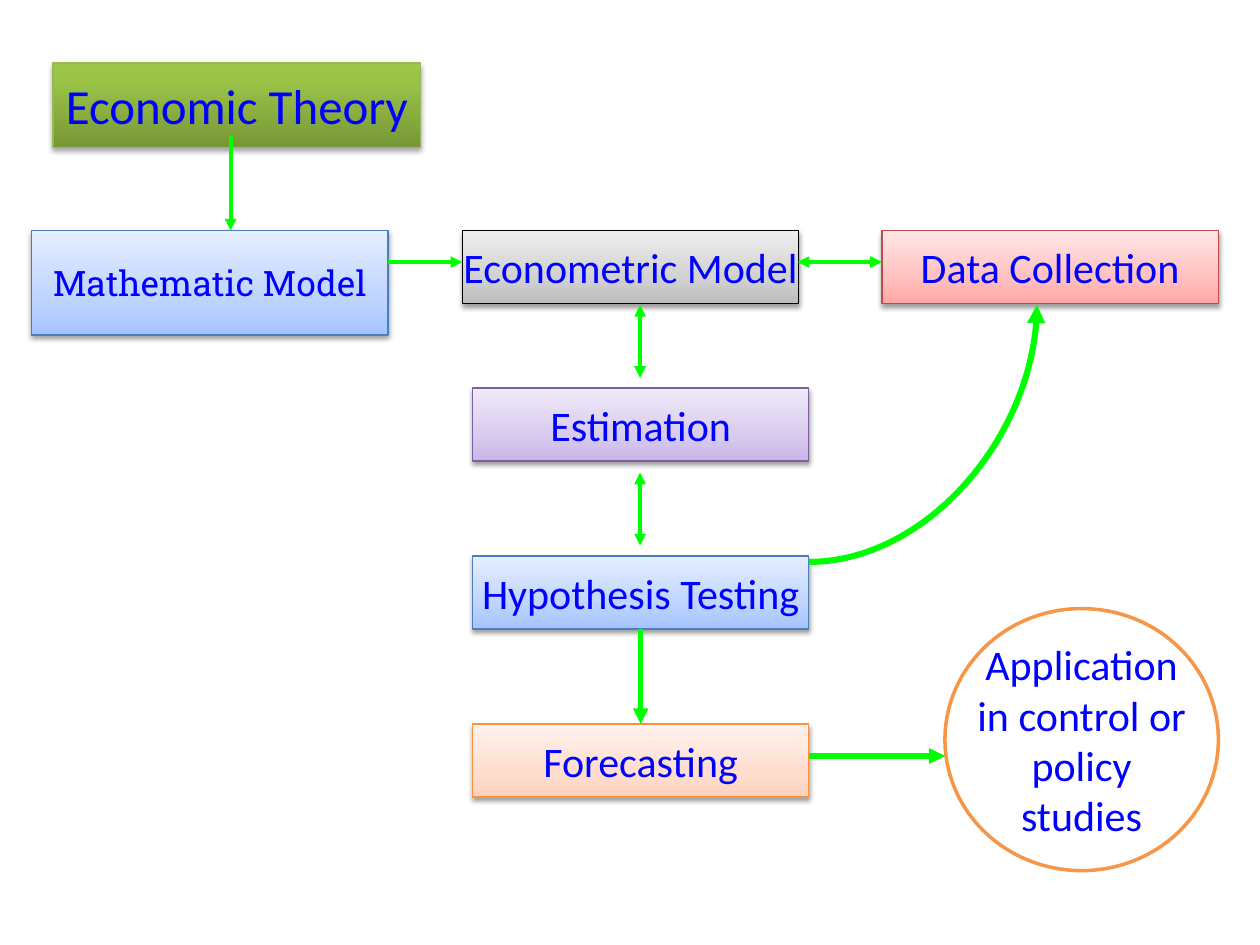
from copy import deepcopy
from dataclasses import dataclass

from lxml.etree import SubElement
from pptx import Presentation
from pptx.dml.color import RGBColor
from pptx.enum.shapes import MSO_CONNECTOR, MSO_SHAPE
from pptx.enum.text import MSO_ANCHOR, PP_ALIGN
from pptx.oxml.ns import qn
from pptx.util import Inches, Pt

BLUE = RGBColor(0x00, 0x00, 0xFF)
LIME = RGBColor(0x00, 0xFF, 0x00)
WHITE = RGBColor(0xFF, 0xFF, 0xFF)
ORANGE = RGBColor(0xF7, 0x96, 0x46)


@dataclass(frozen=True)
class Tone:
    low: RGBColor
    mid: RGBColor
    high: RGBColor
    edge: RGBColor
    stop: float = 0.35
    shade: int = 38
    drop: float = 1.6


@dataclass(frozen=True)
class Box:
    text: str
    left: float
    top: float
    tone: Tone
    width: float = 2.67
    height: float = 0.58
    size: int = 24
    font: str = "Calibri"


@dataclass(frozen=True)
class Arrow:
    start: tuple[float, float]
    end: tuple[float, float]
    weight: float = 2.25
    double: bool = False
    curved: bool = False


def tone(low: str, mid: str, high: str, edge: str, **rest) -> Tone:
    return Tone(*map(RGBColor.from_string, (low, mid, high, edge)), **rest)


GREEN = tone("779737", "9BC348", "9DC746", "98B955", stop=0.8, shade=35, drop=1.8)
SKY = tone("A4C4FF", "BFD4FF", "E6EEFF", "4B7EBC")
GRAY = tone("BDBDBD", "D1D1D1", "EEEEEE", "000000")
RED = tone("FFA6A5", "FFC0BF", "FFE7E7", "BF4C48")
PURPLE = tone("C9B5E8", "D8CBEE", "F0EAF9", "7D60A0")
PEACH = tone("FFD2BD", "FFDED0", "FFF2ED", "F69240")

ROW = 1.83
STEP = 4 / 3
STACK = [("Estimation", PURPLE), ("Hypothesis Testing", SKY), ("Forecasting", PEACH)]
BOXES = [
    Box("Economic Theory", 0.42, 0.5, GREEN, 2.92, 0.67, 28),
    Box("Mathematic Model", 0.25, ROW, SKY, 2.83, 0.83, 20, "Roboto Slab"),
    Box("Econometric Model", 3.67, ROW, GRAY),
    Box("Data Collection", 7, ROW, RED),
] + [Box(text, 3.75, 3.08 + i * STEP, hue) for i, (text, hue) in enumerate(STACK)]

ARROWS = [
    Arrow((1.83, 1.08), (1.83, ROW)),
    Arrow((3.08, 2.08), (3.67, 2.08)),
    Arrow((7, 2.08), (6.33, 2.08), double=True),
    Arrow((5.08, 2.42), (5.08, 3), double=True),
    Arrow((5.08, 3.75), (5.08, 4.33), double=True),
    Arrow((6.42, 4.46), (8.23, 2.42), 3.5, curved=True),
    Arrow((6.42, 6), (7.5, 6), 3),
]
DOWN = Arrow((5.08, 5), (5.08, 5.75), 3)


def write(shape, lines: list[str], size: int, font: str) -> None:
    frame = shape.text_frame
    frame.word_wrap = False
    frame.vertical_anchor = MSO_ANCHOR.MIDDLE
    for i, line in enumerate(lines):
        para = frame.add_paragraph() if i else frame.paragraphs[0]
        para.alignment = PP_ALIGN.CENTER
        run = para.add_run()
        run.text = line
        run.font.size = Pt(size)
        run.font.name = font
        run.font.color.rgb = BLUE


def blend(shape, hue: Tone) -> None:
    fill = shape.fill
    fill.gradient()
    fill.gradient_angle = 90
    stops = shape._element.spPr.find(qn("a:gradFill")).find(qn("a:gsLst"))
    stops.append(deepcopy(stops[-1]))
    parts = zip((0, hue.stop, 1), (hue.low, hue.mid, hue.high))
    for stop, (place, shade) in zip(fill.gradient_stops, parts):
        stop.position = place
        stop.color.rgb = shade


def shadow(shape, hue: Tone) -> None:
    shape.shadow.inherit = False
    effects = shape._element.spPr.find(qn("a:effectLst"))
    outer = SubElement(
        effects,
        qn("a:outerShdw"),
        blurRad=str(Pt(3.1)),
        dist=str(Pt(hue.drop)),
        dir="5400000",
        rotWithShape="0",
    )
    black = SubElement(outer, qn("a:srgbClr"), val="000000")
    SubElement(black, qn("a:alpha"), val=str(hue.shade * 1000))


def draw_box(slide, box: Box):
    place = map(Inches, (box.left, box.top, box.width, box.height))
    shape = slide.shapes.add_shape(MSO_SHAPE.RECTANGLE, *place)
    blend(shape, box.tone)
    shape.line.color.rgb = box.tone.edge
    shape.line.width = Pt(0.75)
    shadow(shape, box.tone)
    write(shape, [box.text], box.size, box.font)
    return shape


def draw_goal(slide) -> None:
    place = map(Inches, (7.5, 4.83, 2.17, 2.08))
    shape = slide.shapes.add_shape(MSO_SHAPE.OVAL, *place)
    shape.shadow.inherit = False
    shape.fill.solid()
    shape.fill.fore_color.rgb = WHITE
    shape.line.color.rgb = ORANGE
    shape.line.width = Pt(2)
    write(shape, ["Application", "in control or", "policy", "studies"], 24, "Calibri")


def draw_arrow(slide, arrow: Arrow):
    kind = MSO_CONNECTOR.CURVE if arrow.curved else MSO_CONNECTOR.STRAIGHT
    ends = map(Inches, arrow.start + arrow.end)
    link = slide.shapes.add_connector(kind, *ends)
    link.line.color.rgb = LIME
    link.line.width = Pt(arrow.weight)
    props = link._element.spPr
    stroke = props.find(qn("a:ln"))
    if arrow.double:
        SubElement(stroke, qn("a:headEnd"), type="triangle")
    SubElement(stroke, qn("a:tailEnd"), type="triangle")
    SubElement(props, qn("a:effectLst"))
    if arrow.curved:
        props.find(qn("a:prstGeom")).set("prst", "curvedConnector2")
    return link


def main() -> None:
    deck = Presentation()
    deck.slide_width = Inches(10)
    deck.slide_height = Inches(7.5)
    slide = deck.slides.add_slide(deck.slide_layouts[6])
    shapes = {box.text: draw_box(slide, box) for box in BOXES}
    draw_goal(slide)
    for arrow in ARROWS:
        draw_arrow(slide, arrow)
    link = draw_arrow(slide, DOWN)
    link.begin_connect(shapes["Hypothesis Testing"], 2)
    link.end_connect(shapes["Forecasting"], 0)
    deck.save("out.pptx")


if __name__ == "__main__":
    main()
